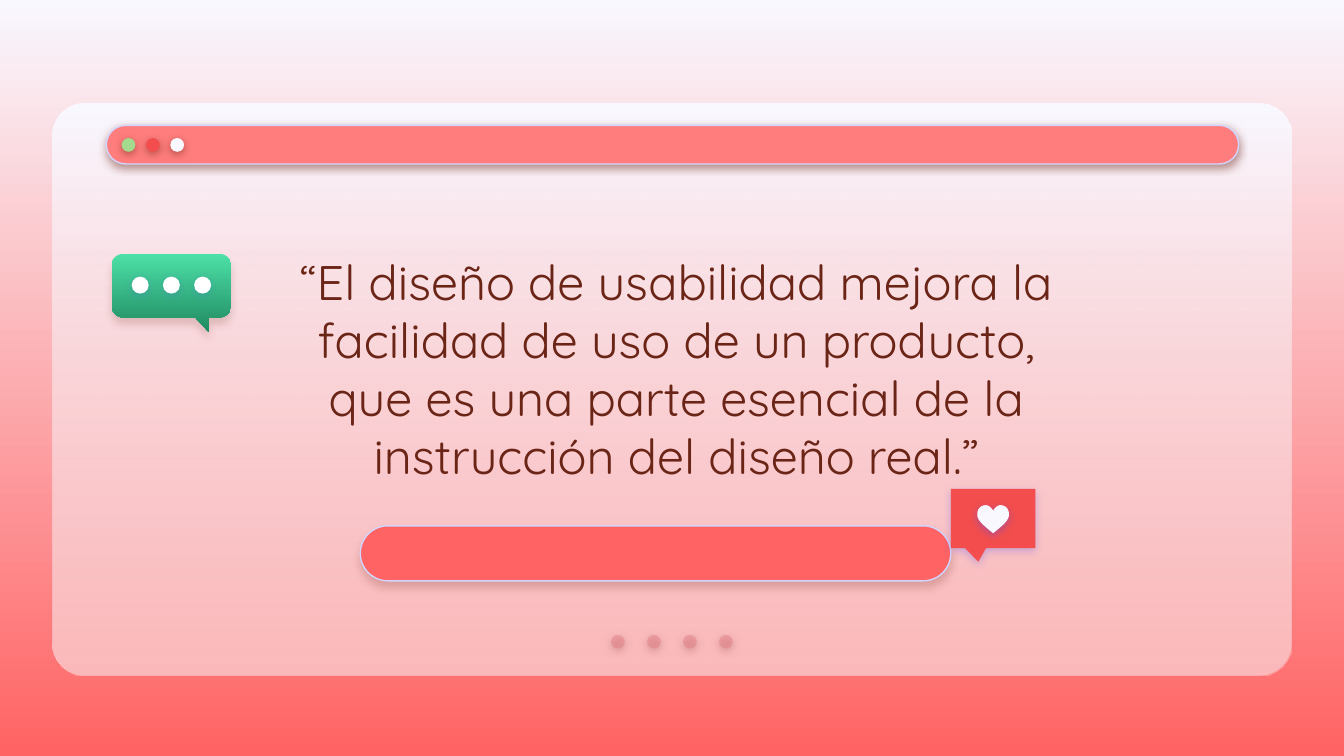
import math

from lxml import etree
from pptx import Presentation
from pptx.dml.color import RGBColor
from pptx.enum import shapes, text
from pptx.oxml import parse_xml
from pptx.oxml.ns import nsdecls, qn
from pptx.util import Cm, Pt

COLORS = {
    "pale": "F9F8FF", "coral": "FF6363", "rose": "FCA1A1", "bar": "FF7D7D",
    "outline": "D2D6FF", "red": "F34D4D", "lime": "A3DA8D", "dot": "E27B83",
    "brown": "6B2517", "violet": "5352EE", "mint": "4DE0A7",
    "green": "208A61", "white": "FFFFFF",
}
FONT = "Quicksand"
SHAPE = shapes.MSO_SHAPE


def rgb(name):
    return RGBColor.from_string(COLORS[name])


def gradient(top, bottom, bottom_alpha=100):
    """Vertical two-stop gradient fill element."""
    return parse_xml(
        f'<a:gradFill {nsdecls("a")} rotWithShape="1"><a:gsLst>'
        f'<a:gs pos="0"><a:srgbClr val="{COLORS[top]}"/></a:gs>'
        f'<a:gs pos="100000"><a:srgbClr val="{COLORS[bottom]}">'
        f'<a:alpha val="{bottom_alpha * 1000}"/></a:srgbClr></a:gs>'
        '</a:gsLst><a:lin ang="5400000" scaled="0"/></a:gradFill>')


def style(sp, fill, line=None, shadow=None, alpha=None):
    """Fill is a colour name or a gradient; shadow is (colour, opacity, distance)."""
    sp.shadow.inherit = False
    sp.fill.solid()
    solid = sp._element.spPr.find(qn("a:solidFill"))
    if isinstance(fill, str):
        sp.fill.fore_color.rgb = rgb(fill)
        if alpha:
            etree.SubElement(solid[0], qn("a:alpha")).set("val", str(alpha * 1000))
    else:
        sp._element.spPr.replace(solid, fill)
    if line:
        sp.line.color.rgb = rgb(line)
        sp.line.width = Pt(0.75)
    else:
        sp.line.fill.background()
    if shadow:
        color, opacity, dist = shadow
        effects = sp._element.spPr.find(qn("a:effectLst"))
        effects.append(parse_xml(
            f'<a:outerShdw {nsdecls("a")} blurRad="{Pt(4.5)}" dist="{Pt(dist)}" '
            'dir="5400000" algn="bl" rotWithShape="0">'
            f'<a:srgbClr val="{COLORS[color]}"><a:alpha val="{opacity * 1000}"/>'
            '</a:srgbClr></a:outerShdw>'))


def add_preset(s, kind, x, y, w, h, fill, adj=(), **look):
    sp = s.shapes.add_shape(kind, Cm(x), Cm(y), Cm(w), Cm(h))
    for i, value in enumerate(adj):
        sp.adjustments[i] = value
    style(sp, fill, **look)


def add_dots(s, x, y, size, pitch, fills, **look):
    for i, fill in enumerate(fills):
        add_preset(s, SHAPE.OVAL, x + i * pitch, y, size, size, fill, **look)


def add_outline(s, points, fill, **look):
    pts = [(Cm(x), Cm(y)) for x, y in points]
    builder = s.shapes.build_freeform(*pts[0])
    builder.add_line_segments(pts[1:], close=True)
    style(builder.convert_to_shape(), fill, **look)


def arc(cx, cy, r, start):
    """Quarter circle, clockwise from the start angle in degrees."""
    angles = [math.radians(start + 9 * i) for i in range(11)]
    return [(cx + r * math.cos(a), cy + r * math.sin(a)) for a in angles]


def bezier(p0, p1, p2, p3, steps=10):
    return [tuple((1 - t) ** 3 * a + 3 * t * (1 - t) ** 2 * b
                  + 3 * t * t * (1 - t) * c + t ** 3 * d
                  for a, b, c, d in zip(p0, p1, p2, p3))
            for t in (i / steps for i in range(steps + 1))]


def add_background(s):
    s.background.fill.solid()
    bg_pr = s.background._cSld.bg.bgPr
    bg_pr.replace(bg_pr.find(qn("a:solidFill")), gradient("pale", "coral"))


def add_window(s, x, y, w, h):
    shadow = ("brown", 50, 1.5)
    for fill in ("pale", gradient("pale", "rose", 72)):
        add_preset(s, SHAPE.ROUNDED_RECTANGLE, x, y, w, h, fill, adj=[0.056])
    # Page dots, centred at the foot
    size, pitch = 0.26, 0.68
    add_dots(s, x + (w - size - 3 * pitch) / 2, y + h - 0.77, size, pitch,
             ["dot"] * 4, alpha=44, shadow=shadow)
    # Title bar with its buttons
    add_preset(s, SHAPE.ROUNDED_RECTANGLE, x + 1.02, y + 0.42, w - 2.02, 0.73,
               "bar", adj=[0.5], line="outline", shadow=shadow)
    add_dots(s, x + 1.31, y + 0.66, size, 0.46, ["lime", "red", "pale"],
             shadow=shadow)


def add_quote(s, x, y, w, h, quote):
    tb = s.shapes.add_textbox(Cm(x), Cm(y), Cm(w), Cm(h))
    tf = tb.text_frame
    tf.word_wrap = True
    tf.vertical_anchor = text.MSO_ANCHOR.MIDDLE
    tf.margin_left = tf.margin_right = tf.margin_top = tf.margin_bottom = Cm(0.25)
    tf.text = quote
    p = tf.paragraphs[0]
    p.alignment = text.PP_ALIGN.CENTER
    p.space_after = Pt(12)
    r = p.runs[0]
    r.font.size = Pt(26)
    r.font.name = FONT
    r.font.color.rgb = rgb("brown")


def add_like(s, x, y, w, h):
    add_preset(s, SHAPE.ROUNDED_RECTANGULAR_CALLOUT, x, y, w, h, "red",
               adj=[-0.174, 0.731, 0], shadow=("violet", 31, 1.5))
    # Heart: one half drawn, the other mirrored
    cx, top, hw, hh = x + w / 2, y + 0.31, 0.3, 0.53
    half = (bezier((0, 0.19), (-0.15, 0.07), (-0.3, 0), (-0.45, 0))
            + bezier((-0.45, 0), (-0.8, 0), (-1, 0.14), (-1, 0.33))
            + bezier((-1, 0.33), (-1, 0.55), (-0.6, 0.72), (0, 1)))
    mirrored = [(-a, b) for a, b in reversed(half)]
    add_outline(s, [(cx + a * hw, top + b * hh) for a, b in half + mirrored],
                "pale", shadow=("violet", 38, 1.5))


def add_chat(s, x, y, w, h):
    r, body = 0.22, y + h - 0.28
    right = x + w
    points = (arc(x + r, y + r, r, 180) + arc(right - r, y + r, r, 270)
              + arc(right - r, body - r, r, 0)
              + [(right - 0.42, body), (right - 0.42, y + h), (right - 0.68, body)]
              + arc(x + r, body - r, r, 90))
    add_outline(s, points, gradient("mint", "green"), shadow=("brown", 18, 3.8))
    size, pitch = 0.32, 0.59
    add_dots(s, x + (w - size - 2 * pitch) / 2, y + 0.43, size, pitch,
             ["white"] * 3, shadow=("violet", 18, 1.5))


def main():
    prs = Presentation()
    prs.slide_width, prs.slide_height = Cm(25.4), Cm(14.29)
    s = prs.slides.add_slide(prs.slide_layouts[6])
    add_background(s)
    add_window(s, 0.99, 1.95, 23.42, 10.82)
    # Name plate
    add_preset(s, SHAPE.ROUNDED_RECTANGLE, 6.81, 9.94, 11.16, 1.04, "coral",
               adj=[0.5], line="outline", shadow=("brown", 22, 3))
    add_quote(s, 5.31, 4.06, 14.96, 5.79,
              "“El diseño de usabilidad mejora la facilidad de uso de un producto, "
              "que es una parte esencial de la instrucción del diseño real.”")
    add_like(s, 17.97, 9.24, 1.6, 1.12)
    add_chat(s, 2.11, 4.8, 2.26, 1.48)
    prs.save("out.pptx")


if __name__ == "__main__":
    main()
